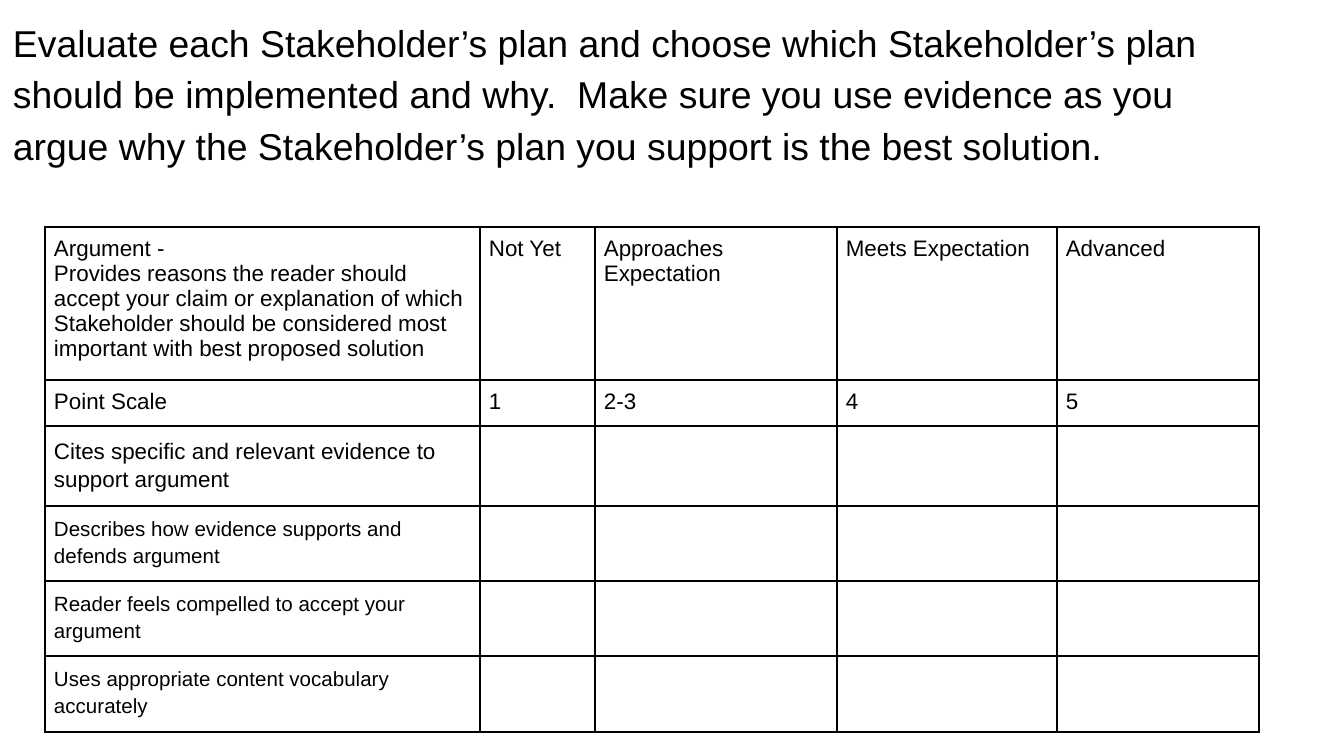
from typing import NamedTuple

from lxml import etree
from pptx import Presentation
from pptx import util as u
from pptx.dml.color import RGBColor
from pptx.enum import text
from pptx.oxml import ns

PX_PER_INCH = 134.4
BLACK = "000000"
FONT = "Arial"
COLUMN_WIDTHS = [435, 115, 242, 220, 202]
CELL_INSET = 9
TITLE = (
    "Evaluate each Stakeholder’s plan and choose which Stakeholder’s plan "
    "should be implemented and why.  Make sure you use evidence as you argue "
    "why the Stakeholder’s plan you support is the best solution."
)


class RubricRow(NamedTuple):
    height: int
    cells: list[str]
    size: int = 12
    spacing: float = 1.0


RUBRIC = [
    RubricRow(153, [
        "Argument -\nProvides reasons the reader should accept your claim or "
        "explanation of which Stakeholder should be considered most important "
        "with best proposed solution",
        "Not Yet",
        "Approaches Expectation",
        "Meets Expectation",
        "Advanced",
    ]),
    RubricRow(46, ["Point Scale", "1", "2-3", "4", "5"]),
    RubricRow(80, ["Cites specific and relevant evidence to support argument"], 12, 1.15),
    RubricRow(75, ["Describes how evidence supports and defends argument"], 11, 1.15),
    RubricRow(75, ["Reader feels compelled to accept your argument"], 11, 1.15),
    RubricRow(76, ["Uses appropriate content vocabulary accurately"], 11, 1.15),
]


def px(length: int) -> u.Emu:
    return u.Emu(round(length * 914400 / PX_PER_INCH))


def color(value: str) -> RGBColor:
    return RGBColor.from_string(value)


def write(frame, words: str, size: int, spacing: float) -> None:
    frame.text = words
    for para in frame.paragraphs:
        para.line_spacing = spacing
        para.alignment = text.PP_ALIGN.LEFT
        for span in para.runs:
            span.font.name = FONT
            span.font.size = u.Pt(size)
            span.font.color.rgb = color(BLACK)


def set_insets(target, inset: int) -> None:
    target.margin_left = target.margin_right = px(inset)
    target.margin_top = target.margin_bottom = px(inset)


def outline_cell(cell, line_color: str, points: int) -> None:
    properties = cell._tc.get_or_add_tcPr()
    for position, side in enumerate(("lnL", "lnR", "lnT", "lnB")):
        line = etree.Element(ns.qn(f"a:{side}"), w=str(u.Pt(points)))
        fill = etree.SubElement(line, ns.qn("a:solidFill"))
        etree.SubElement(fill, ns.qn("a:srgbClr"), val=line_color)
        properties.insert(position, line)


def add_title(slide) -> None:
    box = slide.shapes.add_textbox(px(0), px(0), px(1288), px(176))
    frame = box.text_frame
    frame.word_wrap = True
    set_insets(frame, 13)
    write(frame, TITLE, 20, 1.15)


def add_rubric(slide, rows: list[RubricRow]) -> None:
    width = sum(COLUMN_WIDTHS)
    height = sum(row.height for row in rows)
    table = slide.shapes.add_table(
        len(rows), len(COLUMN_WIDTHS), px(45), px(227), px(width), px(height)
    ).table
    table.first_row = False
    table.horz_banding = False
    for column, column_width in zip(table.columns, COLUMN_WIDTHS):
        column.width = px(column_width)
    for index, row in enumerate(rows):
        table.rows[index].height = px(row.height)
        for cell in table.rows[index].cells:
            set_insets(cell, CELL_INSET)
            cell.fill.background()
            outline_cell(cell, BLACK, 1)
        for cell, words in zip(table.rows[index].cells, row.cells):
            write(cell.text_frame, words, row.size, row.spacing)


def main() -> None:
    deck = Presentation()
    deck.slide_width = px(1344)
    deck.slide_height = px(756)
    page = deck.slides.add_slide(deck.slide_layouts[6])
    add_title(page)
    add_rubric(page, RUBRIC)
    deck.save("out.pptx")


if __name__ == "__main__":
    main()
